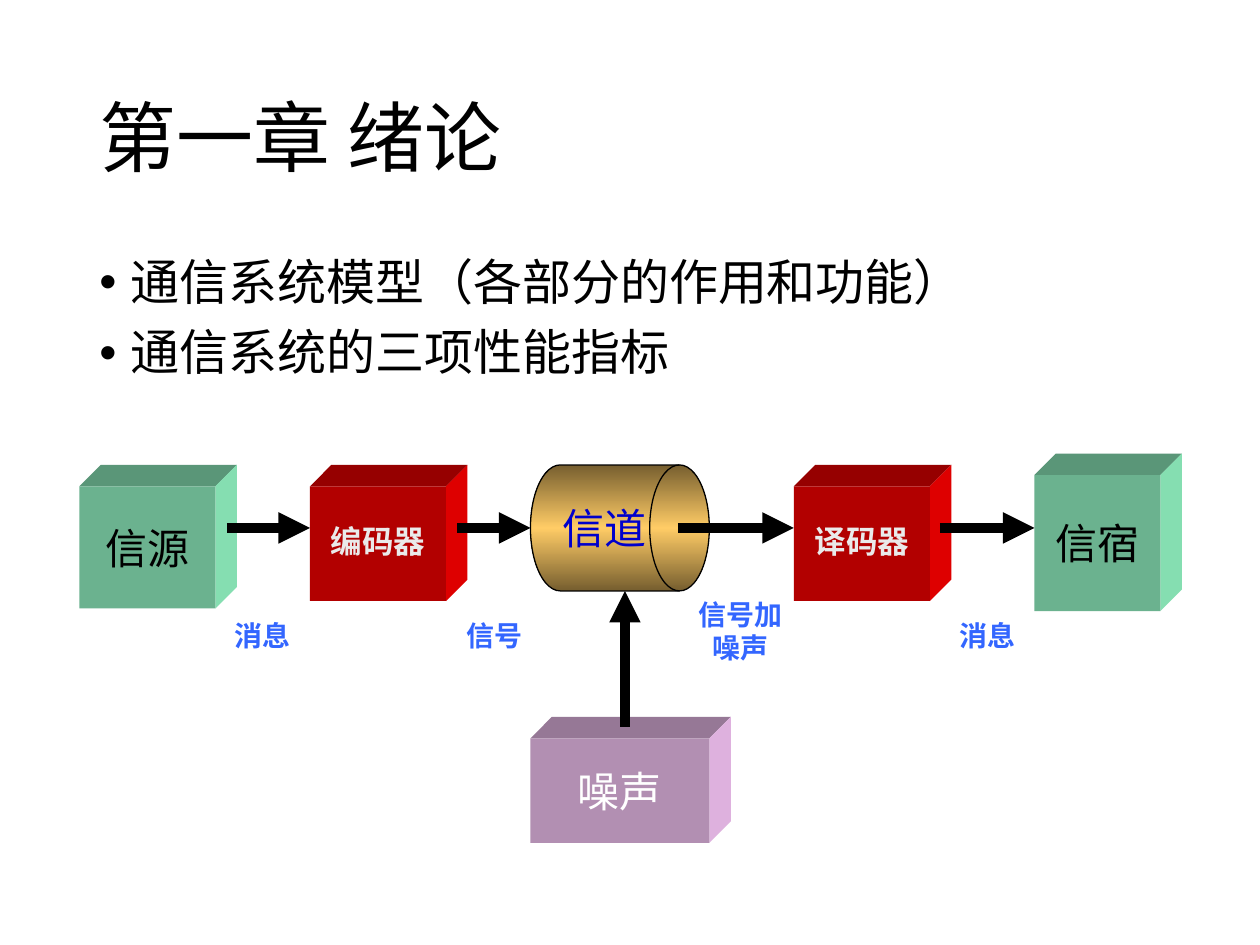
"""Build the chapter slide with the communication system model."""
from copy import deepcopy
from dataclasses import dataclass

from lxml import etree
from pptx import Presentation
from pptx.dml.color import RGBColor
from pptx.enum.shapes import MSO_CONNECTOR, MSO_SHAPE
from pptx.enum.text import MSO_ANCHOR, PP_ALIGN
from pptx.oxml.ns import qn
from pptx.util import Inches, Pt

CENTER, LEFT = PP_ALIGN.CENTER, PP_ALIGN.LEFT
MIDDLE, TOP = MSO_ANCHOR.MIDDLE, MSO_ANCHOR.TOP
RECTANGLE, DRUM = MSO_SHAPE.RECTANGLE, MSO_SHAPE.FLOWCHART_DIRECT_ACCESS_STORAGE
STRAIGHT = MSO_CONNECTOR.STRAIGHT
DEPTH = 0.17
FRONT, ROOF, SIDE = 0.7, 0.59, 0.87
FLOW_Y = 4.19
DRUM_LEFT_SITE = 1

TITLE = {"name": "Calibri", "size": Pt(44)}
BULLET = {"name": "Calibri", "size": Pt(28)}
NODE = {"name": "Times New Roman", "size": Pt(24)}
CODER = {"name": "Arial", "size": Pt(18), "bold": True}
LABEL = {"name": "Times New Roman", "size": Pt(16), "bold": True}


@dataclass
class Block:
    text: str
    left: float
    top: float
    width: float
    height: float
    base: str
    ink: str
    font: dict
    spacing: float = 1.0


@dataclass
class Arrow:
    start: tuple[float, float]
    end: tuple[float, float]
    joins_drum: bool = False


@dataclass
class Label:
    text: str
    left: float
    top: float
    width: float
    height: float


BLOCKS = [
    Block("信源", 0.63, 3.86, 1.08, 0.97, "99FFCC", "000000", NODE),
    Block("译码器", 6.3, 3.86, 1.08, 0.91, "FF0000", "EAEAEA", CODER, 0.9),
    Block("编码器", 2.46, 3.86, 1.08, 0.91, "FF0000", "EAEAEA", CODER, 0.9),
    Block("信宿", 8.21, 3.77, 1, 1.08, "99FFCC", "000000", NODE),
    Block("噪声", 4.21, 5.86, 1.42, 0.83, "FFCCFF", "FFFFFF", NODE),
]
ARROWS = [
    Arrow((1.8, FLOW_Y), (2.46, FLOW_Y)),
    Arrow((3.63, FLOW_Y), (4.21, FLOW_Y), joins_drum=True),
    Arrow((5.38, FLOW_Y), (6.3, FLOW_Y)),
    Arrow((7.46, FLOW_Y), (8.21, FLOW_Y)),
    Arrow((4.96, 5.77), (4.96, 4.69)),
]
LABELS = [
    Label("消息", 1.71, 4.86, 0.75, 0.37),
    Label("信号", 3.55, 4.86, 0.75, 0.37),
    Label("信号加噪声", 5.38, 4.69, 1, 0.64),
    Label("消息", 7.46, 4.86, 0.75, 0.37),
]


def color(value: str) -> RGBColor:
    """Turn a hex string into a colour."""
    return RGBColor.from_string(value)


def shade(value: str, factor: float) -> str:
    """Darken a hex colour by a factor."""
    return "".join(f"{round(int(value[i:i + 2], 16) * factor):02X}" for i in (0, 2, 4))


def write(para, text: str, font: dict, ink: str, **layout) -> None:
    """Write one formatted span into a paragraph."""
    for name, value in layout.items():
        setattr(para, name, value)
    span = para.add_run()
    span.text = text
    for name, value in font.items():
        setattr(span.font, name, value)
    span.font.color.rgb = color(ink)


def add_box(page, left: float, top: float, width: float, height: float, anchor):
    """Add a wrapping text box and return its text frame."""
    box = page.shapes.add_textbox(Inches(left), Inches(top), Inches(width), Inches(height))
    box.text_frame.word_wrap = True
    box.text_frame.vertical_anchor = anchor
    return box.text_frame


def add_bullet(para) -> None:
    """Give a paragraph a hanging bullet."""
    properties = para._p.get_or_add_pPr()
    properties.set("marL", str(Inches(0.25)))
    properties.set("indent", str(-Inches(0.25)))
    etree.SubElement(properties, qn("a:buFont"), typeface="Arial")
    etree.SubElement(properties, qn("a:buChar"), char="•")


def paint(shape, value: str) -> None:
    """Fill a shape plainly, without outline or shadow."""
    shape.shadow.inherit = False
    shape.fill.solid()
    shape.fill.fore_color.rgb = color(value)
    shape.line.fill.background()


def add_face(page, points: list[tuple[float, float]], value: str) -> None:
    """Draw one slanted face of a block."""
    corners = [(Inches(x), Inches(y)) for x, y in points]
    builder = page.shapes.build_freeform(*corners[0])
    builder.add_line_segments(corners[1:], close=True)
    paint(builder.convert_to_shape(), value)


def caption(shape, text: str, font: dict, ink: str, spacing: float = 1.0) -> None:
    """Centre a caption in a shape."""
    frame = shape.text_frame
    frame.word_wrap = False
    frame.vertical_anchor = MIDDLE
    write(frame.paragraphs[0], text, font, ink, alignment=CENTER, line_spacing=spacing)


def add_block(page, block: Block) -> None:
    """Draw a solid block with a front, a roof and a side."""
    left, top = block.left, block.top
    right, bottom = left + block.width, top + block.height
    far_right, far_top = right + DEPTH, top - DEPTH
    add_face(page, [(left, top), (left + DEPTH, far_top), (far_right, far_top), (right, top)],
             shade(block.base, ROOF))
    add_face(page, [(right, top), (far_right, far_top), (far_right, bottom - DEPTH), (right, bottom)],
             shade(block.base, SIDE))
    front = page.shapes.add_shape(RECTANGLE, Inches(left), Inches(top),
                                  Inches(block.width), Inches(block.height))
    paint(front, shade(block.base, FRONT))
    caption(front, block.text, block.font, block.ink, block.spacing)


def add_channel(page):
    """Draw the channel drum with a three-stop gradient."""
    drum = page.shapes.add_shape(DRUM, Inches(4.21), Inches(3.69), Inches(1.42), Inches(1))
    drum.shadow.inherit = False
    drum.fill.gradient()
    drum.fill.gradient_angle = 90
    stops = drum._element.spPr.find(qn("a:gradFill")).find(qn("a:gsLst"))
    stops.insert(1, deepcopy(stops[0]))
    for stop, position, value in zip(drum.fill.gradient_stops, (0, 0.5, 1),
                                     ("765E2F", "FFCC66", "765E2F")):
        stop.position = position
        stop.color.rgb = color(value)
    drum.line.color.rgb = color("000000")
    drum.line.width = Pt(0.75)
    caption(drum, "信道", NODE, "0000CC")
    return drum


def add_arrow(page, arrow: Arrow, drum) -> None:
    """Draw a thick arrow, joined to the drum where it meets its side."""
    ends = [Inches(value) for value in (*arrow.start, *arrow.end)]
    connector = page.shapes.add_connector(STRAIGHT, *ends)
    if arrow.joins_drum:
        connector.end_connect(drum, DRUM_LEFT_SITE)
    connector.line.color.rgb = color("000000")
    connector.line.width = Pt(6)
    etree.SubElement(connector.get_or_add_ln(), qn("a:tailEnd"), type="triangle")
    etree.SubElement(connector._element.spPr, qn("a:effectLst"))


def main() -> None:
    """Build and save the slide."""
    deck = Presentation()
    deck.slide_width, deck.slide_height = Inches(10), Inches(7.5)
    page = deck.slides.add_slide(deck.slide_layouts[6])
    title = add_box(page, 0.69, 0.4, 8.62, 1.45, MIDDLE)
    write(title.paragraphs[0], "第一章 绪论", TITLE, "000000", alignment=LEFT, line_spacing=0.9)
    body = add_box(page, 0.69, 2, 8.62, 4.76, TOP)
    for index, text in enumerate(("通信系统模型（各部分的作用和功能）", "通信系统的三项性能指标")):
        para = body.add_paragraph() if index else body.paragraphs[0]
        write(para, text, BULLET, "000000", line_spacing=0.9, space_before=Pt(10))
        add_bullet(para)
    drum = add_channel(page)
    for block in BLOCKS:
        add_block(page, block)
    for arrow in ARROWS:
        add_arrow(page, arrow, drum)
    for label in LABELS:
        frame = add_box(page, label.left, label.top, label.width, label.height, TOP)
        write(frame.paragraphs[0], label.text, LABEL, "3366FF", alignment=CENTER)
    deck.save("out.pptx")


if __name__ == "__main__":
    main()
